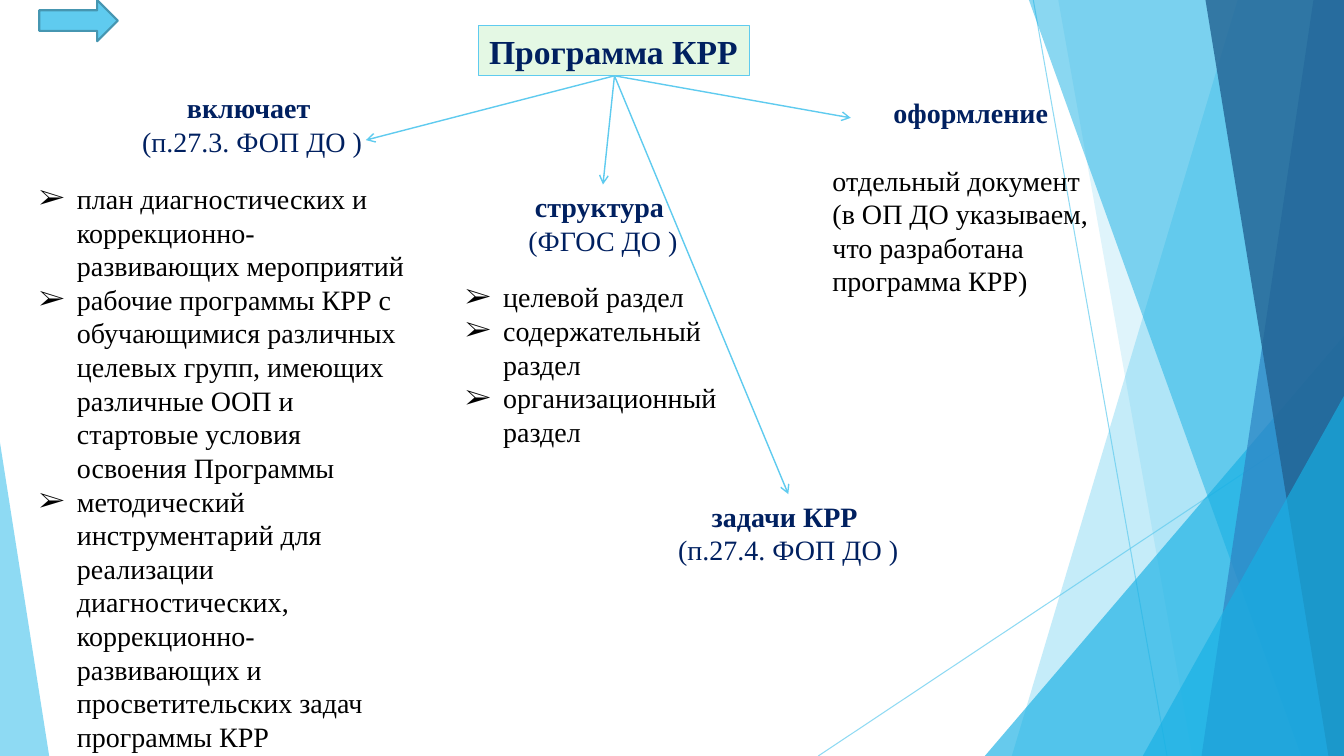
from lxml import etree
from pptx import Presentation
from pptx.dml.color import RGBColor
from pptx.enum.shapes import MSO_CONNECTOR, MSO_SHAPE
from pptx.enum.text import MSO_ANCHOR, PP_ALIGN
from pptx.oxml.ns import qn
from pptx.util import Cm, Pt

FONT = "Times New Roman"
WIDTH, HEIGHT = 33.87, 19.05
COLORS = {
    "sky": "5FCBEF", "azure": "17B0E4", "blue": "2E83C3", "deep": "226292",
    "mint": "E4F8E4", "rim": "4696B1", "navy": "002060", "black": "000000",
}


def color(name):
    return RGBColor.from_string(COLORS[name])


def set_alpha(fill_owner, percent):
    solid = fill_owner.find(".//" + qn("a:solidFill"))
    etree.SubElement(solid[0], qn("a:alpha"), val=str(percent * 1000))


def paint(shape, fill, alpha=100):
    shape.shadow.inherit = False
    shape.fill.solid()
    shape.fill.fore_color.rgb = color(fill)
    set_alpha(shape.fill._xPr, alpha)
    shape.line.fill.background()


def add_line(page, start, end, width, alpha=100):
    line = page.shapes.add_connector(
        MSO_CONNECTOR.STRAIGHT, *[Cm(value) for value in (*start, *end)])
    line.line.color.rgb = color("sky")
    line.line.width = Pt(width)
    set_alpha(line.line._ln, alpha)
    etree.SubElement(line._element.spPr, qn("a:effectLst"))
    return line


def add_band(page, top_x, bottom_x, fill, alpha):
    """Fill the area from a slanted left edge to the right side of the page."""
    builder = page.shapes.build_freeform(Cm(top_x), 0)
    builder.add_line_segments([
        (Cm(WIDTH), 0), (Cm(WIDTH), Cm(HEIGHT)), (Cm(bottom_x), Cm(HEIGHT))])
    paint(builder.convert_to_shape(), fill, alpha)


def add_corner(page, left, top, width, apex, fill, alpha):
    """Stand a right triangle on the bottom of the page."""
    corner = page.shapes.add_shape(
        MSO_SHAPE.ISOSCELES_TRIANGLE, Cm(left), Cm(top), Cm(width), Cm(HEIGHT - top))
    corner.adjustments[0] = apex
    paint(corner, fill, alpha)


def add_backdrop(page):
    add_line(page, (26.04, 0), (29.41, HEIGHT), 0.75, 70)
    add_line(page, (WIDTH, 10.24), (20.62, HEIGHT), 0.75, 70)
    add_band(page, 31.19, 25.5, "sky", 36)
    add_band(page, 26.67, 30.05, "sky", 20)
    add_corner(page, 24.82, 8.46, WIDTH - 24.82, 1, "azure", 66)
    add_band(page, 25.93, 32.79, "azure", 50)
    add_band(page, 33.1, 30.28, "blue", 70)
    add_band(page, 30.38, 33.48, "deep", 80)
    add_corner(page, 28.8, 9.98, WIDTH - 28.8, 1, "azure", 66)
    add_corner(page, 0, 11.15, 1.24, 0, "sky", 70)


def add_run(para, text, fill, bold=False, size=20):
    run = para.add_run()
    run.text = text
    run.font.name = FONT
    run.font.size = Pt(size)
    run.font.bold = bold
    run.font.color.rgb = color(fill)


def add_text_box(page, box):
    shape = page.shapes.add_textbox(*[Cm(value) for value in box])
    shape.text_frame.word_wrap = True
    return shape


def add_heading(page, box, title, reference=None):
    heading = add_text_box(page, box)
    para = heading.text_frame.paragraphs[0]
    para.alignment = PP_ALIGN.CENTER
    add_run(para, title, "navy", bold=True)
    if reference:
        para = heading.text_frame.add_paragraph()
        para.alignment = PP_ALIGN.CENTER
        add_run(para, reference, "navy")
    return heading


def add_bullets(page, box, items):
    frame = add_text_box(page, box).text_frame
    for index, item in enumerate(items):
        para = frame.add_paragraph() if index else frame.paragraphs[0]
        props = para._p.get_or_add_pPr()
        props.set("marL", str(Cm(0.95)))
        props.set("indent", str(-Cm(0.95)))
        etree.SubElement(props, qn("a:buFont"), typeface=FONT)
        etree.SubElement(props, qn("a:buChar"), char="➢")
        add_run(para, item, "black")


def format_title(page, box):
    title = page.shapes.title
    title.left, title.top, title.width, title.height = [Cm(value) for value in box]
    paint(title, "mint")
    title.line.color.rgb = color("sky")
    title.line.width = Pt(0.75)
    frame = title.text_frame
    frame.word_wrap = False
    frame.vertical_anchor = MSO_ANCHOR.MIDDLE
    frame.paragraphs[0].alignment = PP_ALIGN.LEFT
    add_run(frame.paragraphs[0], "Программа КРР", "navy", bold=True, size=24)
    return title


def add_pointer(page, box):
    pointer = page.shapes.add_shape(
        MSO_SHAPE.RIGHT_ARROW, *[Cm(value) for value in box])
    paint(pointer, "sky")
    pointer.line.color.rgb = color("rim")
    pointer.line.width = Pt(1.5)


def add_branch(page, title, end, heading=None):
    """Draw an arrow from the title to a point or to the top of a heading."""
    branch = add_line(page, (15.48, 1.91), end, 1)
    branch.begin_connect(title, 2)
    if heading:
        branch.end_connect(heading, 0)
    etree.SubElement(branch.line._ln, qn("a:tailEnd"), type="arrow")


def build_program_page(deck):
    page = deck.slides.add_slide(deck.slide_layouts[5])
    add_backdrop(page)
    title = format_title(page, (12.07, 0.64, 6.83, 1.27))

    add_heading(page, (2.62, 2.16, 7.47, 1.96), "включает ", "(п.27.3. ФОП ДО )")
    add_bullets(page, (0.74, 4.45, 9.73, 14.78), [
        "план диагностических и коррекционно-развивающих мероприятий",
        "рабочие программы КРР с обучающимися различных целевых групп, "
        "имеющих различные ООП и стартовые условия освоения Программы",
        "методический инструментарий для реализации диагностических, "
        "коррекционно-развивающих и просветительских задач программы КРР",
    ])
    add_pointer(page, (0.99, 0, 1.98, 1.04))

    structure = add_heading(
        page, (11.46, 4.65, 7.47, 1.96), "структура ", "(ФГОС ДО )")
    add_bullets(page, (11.48, 6.93, 8.31, 5.38), [
        "целевой раздел", "содержательный раздел", "организационный раздел"])
    tasks = add_heading(
        page, (16.13, 12.45, 7.47, 1.96), "задачи КРР ", "(п.27.4. ФОП ДО )")

    design = add_heading(page, (20.73, 2.29, 7.47, 6.25), "оформление")
    para = design.text_frame.add_paragraph()
    para.space_before = Pt(24)
    add_run(para, "отдельный документ (в ОП ДО указываем, "
                  "что разработана программа КРР)", "black")

    add_branch(page, title, (9.22, 3.53))
    add_branch(page, title, (15.2, 4.65), structure)
    add_branch(page, title, (19.87, 12.45), tasks)
    add_branch(page, title, (21.44, 2.97))


def main():
    deck = Presentation()
    deck.slide_width, deck.slide_height = Cm(WIDTH), Cm(HEIGHT)
    build_program_page(deck)
    deck.save("out.pptx")


if __name__ == "__main__":
    main()
